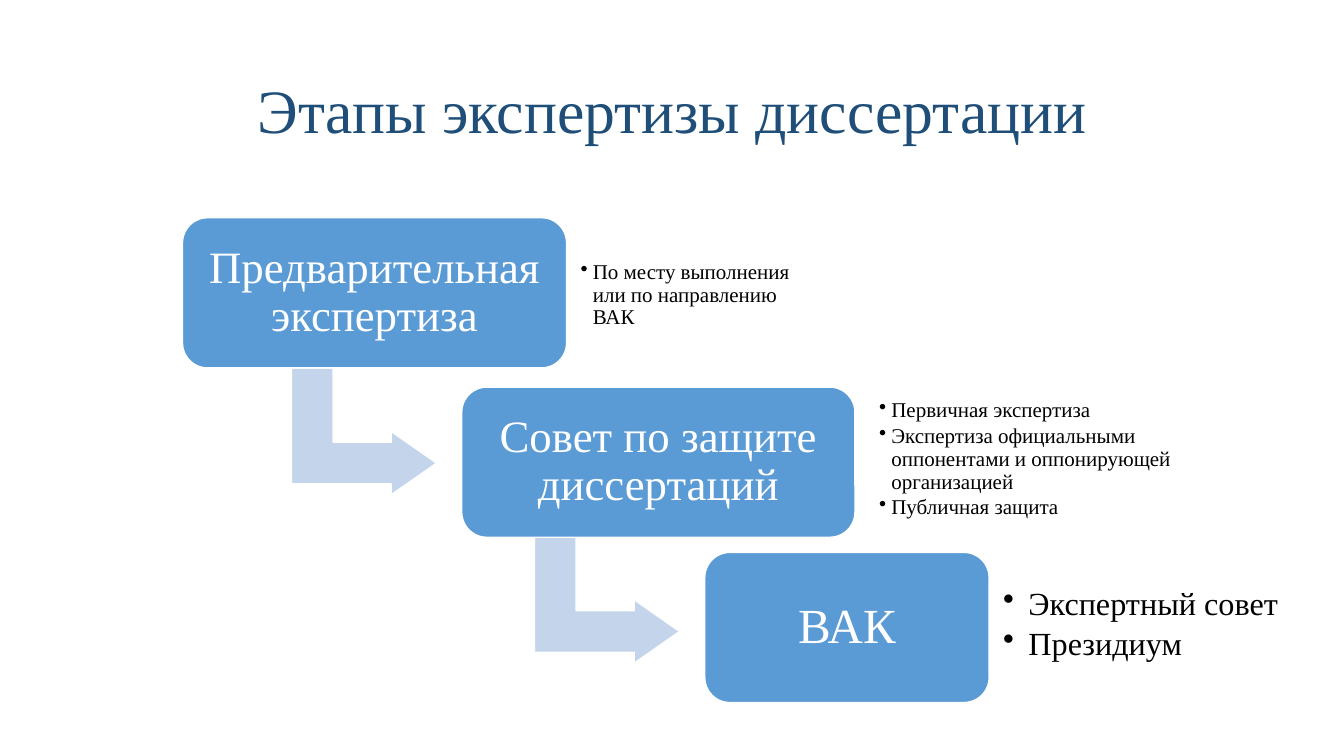
"""Build a slide with the three descending stages of dissertation review."""
from dataclasses import dataclass

import lxml.etree
import pptx
import pptx.dml.color
import pptx.enum.shapes
import pptx.enum.text
import pptx.oxml.ns
import pptx.util

Inches = pptx.util.Inches
Pt = pptx.util.Pt
COLORS = {"title": "1F4E79", "stage": "5B9BD5", "arrow": "C4D5EB",
          "light": "FFFFFF", "text": "000000"}
FONT = "Times New Roman"
STAGE_HEIGHT = 1.49
ARROW_WIDTH, ARROW_HEIGHT = 1.26, 1.44


@dataclass(frozen=True)
class Area:
    left: float
    top: float
    width: float
    height: float

    def lengths(self) -> tuple:
        return tuple(Inches(v) for v in (self.left, self.top, self.width, self.height))


@dataclass(frozen=True)
class Stage:
    name: str
    left: float
    top: float
    width: float
    name_size: int
    name_inset: float
    details: tuple[str, ...]
    details_area: Area
    details_size: int
    details_inset: float
    indent: float


@dataclass(frozen=True)
class Arrow:
    left: float
    top: float


STAGES = (
    Stage("Предварительная экспертиза", 1.81, 2.16, 3.81, 32, 0.13,
          ("По месту выполнения или по направлению ВАК",),
          Area(5.68, 2.33, 2.37, 1.2), 15, 0.08, 0.12),
    Stage("Совет по защите диссертаций", 4.58, 3.84, 3.9, 32, 0.13,
          ("Первичная экспертиза",
           "Экспертиза официальными оппонентами и оппонирующей организацией",
           "Публичная защита"),
          Area(8.64, 3.84, 3.22, 1.44), 15, 0.08, 0.12),
    Stage("ВАК", 6.99, 5.48, 2.82, 35, 0.15,
          ("Экспертный совет", "Президиум"),
          Area(9.83, 5.6, 2.97, 1.2), 23, 0.12, 0.25),
)
ARROWS = (Arrow(2.98, 3.56), Arrow(5.39, 5.23))


def rgb(name: str) -> pptx.dml.color.RGBColor:
    return pptx.dml.color.RGBColor.from_string(COLORS[name])


def prepare_frame(frame, inset_x: float, inset_y: float) -> None:
    frame.word_wrap = True
    frame.vertical_anchor = pptx.enum.text.MSO_ANCHOR.MIDDLE
    frame.margin_left = frame.margin_right = Inches(inset_x)
    frame.margin_top = frame.margin_bottom = Inches(inset_y)


def write(paragraph, text: str, size: int, color: str, centered: bool = True) -> None:
    align = pptx.enum.text.PP_ALIGN
    paragraph.alignment = align.CENTER if centered else align.LEFT
    paragraph.line_spacing = 0.9
    run = paragraph.add_run()
    run.text = text
    run.font.name = FONT
    run.font.size = Pt(size)
    run.font.color.rgb = rgb(color)


def add_bullet(paragraph, indent: float) -> None:
    properties = paragraph._p.get_or_add_pPr()
    properties.set("marL", str(Inches(indent)))
    properties.set("indent", str(-Inches(indent)))
    bullet = lxml.etree.SubElement(properties, pptx.oxml.ns.qn("a:buChar"))
    bullet.set("char", "•")


def add_figure(slide, kind, area: Area, color: str, adjustments: tuple[float, ...]):
    figure = slide.shapes.add_shape(kind, *area.lengths())
    figure.shadow.inherit = False
    figure.fill.solid()
    figure.fill.fore_color.rgb = rgb(color)
    figure.line.color.rgb = rgb("light")
    figure.line.width = Pt(1)
    for index, value in enumerate(adjustments):
        figure.adjustments[index] = value
    return figure


def add_title(slide, text: str) -> None:
    title = slide.shapes.add_textbox(*Area(0.92, 0.4, 11.5, 1.45).lengths())
    prepare_frame(title.text_frame, 0.1, 0.05)
    write(title.text_frame.paragraphs[0], text, 44, "title")


def add_arrow(slide, arrow: Arrow) -> None:
    area = Area(arrow.left, arrow.top, ARROW_WIDTH, ARROW_HEIGHT)
    kind = pptx.enum.shapes.MSO_SHAPE.BENT_UP_ARROW
    add_figure(slide, kind, area, "arrow", (0.328, 0.25, 0.358)).rotation = 90


def add_stage(slide, stage: Stage) -> None:
    area = Area(stage.left, stage.top, stage.width, STAGE_HEIGHT)
    kind = pptx.enum.shapes.MSO_SHAPE.ROUNDED_RECTANGLE
    box = add_figure(slide, kind, area, "stage", (0.167,))
    prepare_frame(box.text_frame, stage.name_inset, stage.name_inset)
    write(box.text_frame.paragraphs[0], stage.name, stage.name_size, "light")

    details = slide.shapes.add_textbox(*stage.details_area.lengths())
    frame = details.text_frame
    prepare_frame(frame, stage.details_inset, stage.details_inset)
    for index, text in enumerate(stage.details):
        paragraph = frame.add_paragraph() if index else frame.paragraphs[0]
        write(paragraph, text, stage.details_size, "text", centered=False)
        paragraph.space_after = Pt(0.15 * stage.details_size)
        add_bullet(paragraph, stage.indent)


def main() -> None:
    deck = pptx.Presentation()
    deck.slide_width, deck.slide_height = Inches(13.33), Inches(7.5)
    slide = deck.slides.add_slide(deck.slide_layouts[6])
    add_title(slide, "Этапы экспертизы диссертации")
    for arrow in ARROWS:
        add_arrow(slide, arrow)
    for stage in STAGES:
        add_stage(slide, stage)
    deck.save("out.pptx")


if __name__ == "__main__":
    main()
